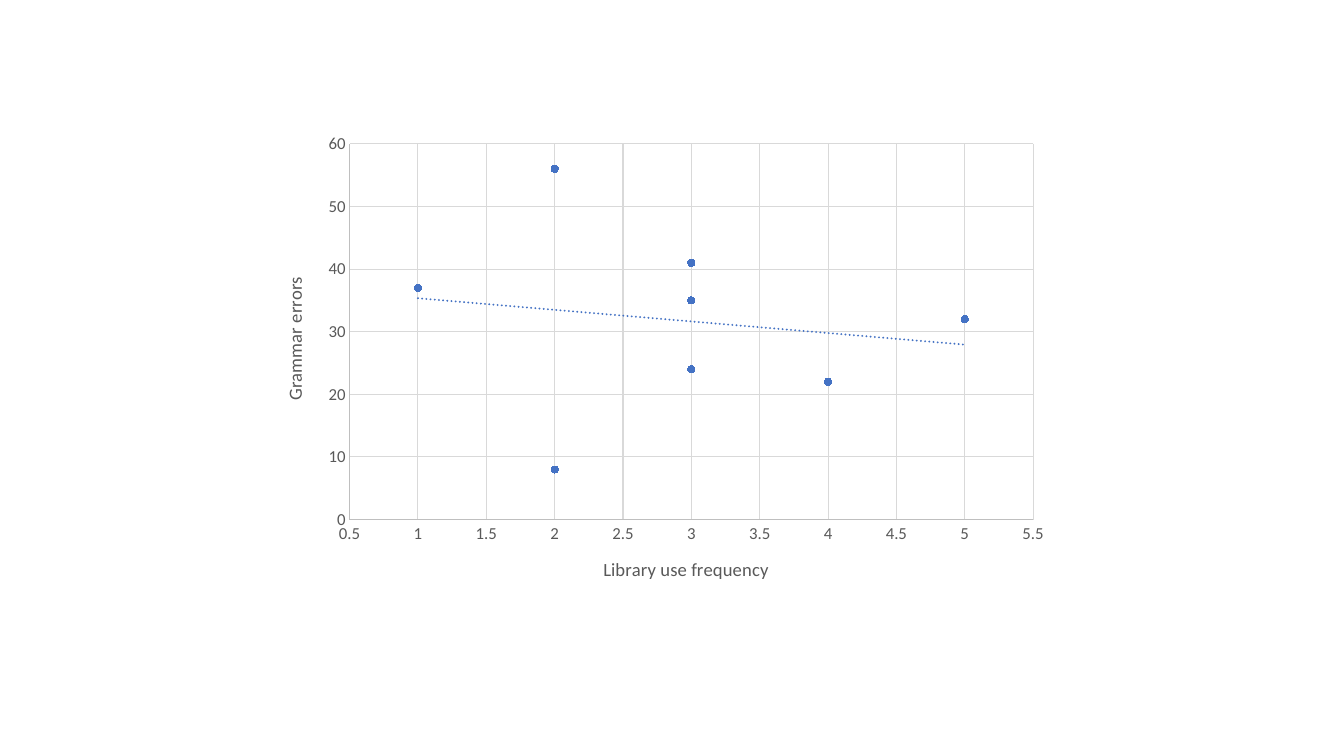
from lxml import etree
from pptx import Presentation
from pptx import util as u
from pptx.chart.data import XyChartData
from pptx.dml.color import RGBColor
from pptx.enum import chart as ch
from pptx.oxml import parse_xml
from pptx.oxml.ns import nsdecls, qn

PX = 9525  # EMU per px at 96 px to the inch
BLUE = RGBColor(0x44, 0x72, 0xC4)
TEXT_GREY = RGBColor(0x59, 0x59, 0x59)
AXIS_GREY = RGBColor(0xBF, 0xBF, 0xBF)
GRID_GREY = RGBColor(0xD9, 0xD9, 0xD9)
FONT = "Calibri"

CHART_BOX = (249, 119, 762, 457)
PLOT_BOX = (84, 18, 651, 358)  # within the chart
POINTS = [(1, 37), (2, 8), (2, 56), (4, 22), (3, 35), (3, 24), (5, 32), (3, 41)]


def px(n):
    return u.Emu(n * PX)


def style_font(font, size):
    font.name = FONT
    font.size = u.Pt(size)
    font.bold = False
    font.color.rgb = TEXT_GREY


def style_line(line, color):
    line.color.rgb = color
    line.width = u.Pt(0.75)


def style_axis(axis, title, low, high, step):
    axis.minimum_scale, axis.maximum_scale = low, high
    axis.major_unit = step
    axis.major_tick_mark = axis.minor_tick_mark = ch.XL_TICK_MARK.NONE
    axis.has_major_gridlines = True
    style_line(axis.major_gridlines.format.line, GRID_GREY)
    style_line(axis.format.line, AXIS_GREY)
    style_font(axis.tick_labels.font, 12)
    tf = axis.axis_title.text_frame
    tf.text = title
    style_font(tf.paragraphs[0].runs[0].font, 13.3)


def style_points(series):
    series.format.line.fill.background()
    marker = series.marker
    marker.style = ch.XL_MARKER_STYLE.CIRCLE
    marker.size = 5
    marker.format.fill.solid()
    marker.format.fill.fore_color.rgb = BLUE
    style_line(marker.format.line, BLUE)


def add_trendline(series):
    trendline = parse_xml(
        f'<c:trendline {nsdecls("c", "a")}><c:spPr><a:ln w="{u.Pt(1.5)}" cap="rnd">'
        f'<a:solidFill><a:srgbClr val="{BLUE}"/></a:solidFill><a:prstDash val="sysDot"/>'
        '</a:ln></c:spPr><c:trendlineType val="linear"/>'
        '<c:dispRSqr val="0"/><c:dispEq val="0"/></c:trendline>'
    )
    series._element.find(qn("c:xVal")).addprevious(trendline)


def place_plot(chart):
    """Fix the inner plot area as fractions of the chart frame."""
    area = chart._chartSpace.chart.plotArea
    for old in area.findall(qn("c:layout")):
        area.remove(old)
    layout = etree.Element(qn("c:layout"))
    manual = etree.SubElement(layout, qn("c:manualLayout"))
    width, height = CHART_BOX[2:]
    settings = [("layoutTarget", "inner"), ("xMode", "edge"), ("yMode", "edge")]
    settings += [
        (name, f"{length / whole:.4f}")
        for name, length, whole in zip("xywh", PLOT_BOX, (width, height) * 2)
    ]
    for name, value in settings:
        etree.SubElement(manual, qn(f"c:{name}")).set("val", value)
    area.insert(0, layout)


def add_scatter(s):
    data = XyChartData()
    points = data.add_series("Series 1")
    for x, y in POINTS:
        points.add_data_point(x, y)
    frame = s.shapes.add_chart(
        ch.XL_CHART_TYPE.XY_SCATTER, *map(px, CHART_BOX), data
    )
    chart = frame.chart
    chart.has_title = chart.has_legend = False
    chart.font.name = FONT
    chart.font.size = u.Pt(10)
    chart.plots[0].vary_by_categories = False
    style_axis(chart.category_axis, "Library use frequency", 0.5, 5.5, 0.5)
    style_axis(chart.value_axis, "Grammar errors", 0, 60, 10)
    series = chart.plots[0].series[0]
    style_points(series)
    add_trendline(series)
    place_plot(chart)


def main():
    prs = Presentation()
    prs.slide_width, prs.slide_height = px(1280), px(720)
    s = prs.slides.add_slide(prs.slide_layouts[6])
    add_scatter(s)
    prs.save("out.pptx")


if __name__ == "__main__":
    main()
